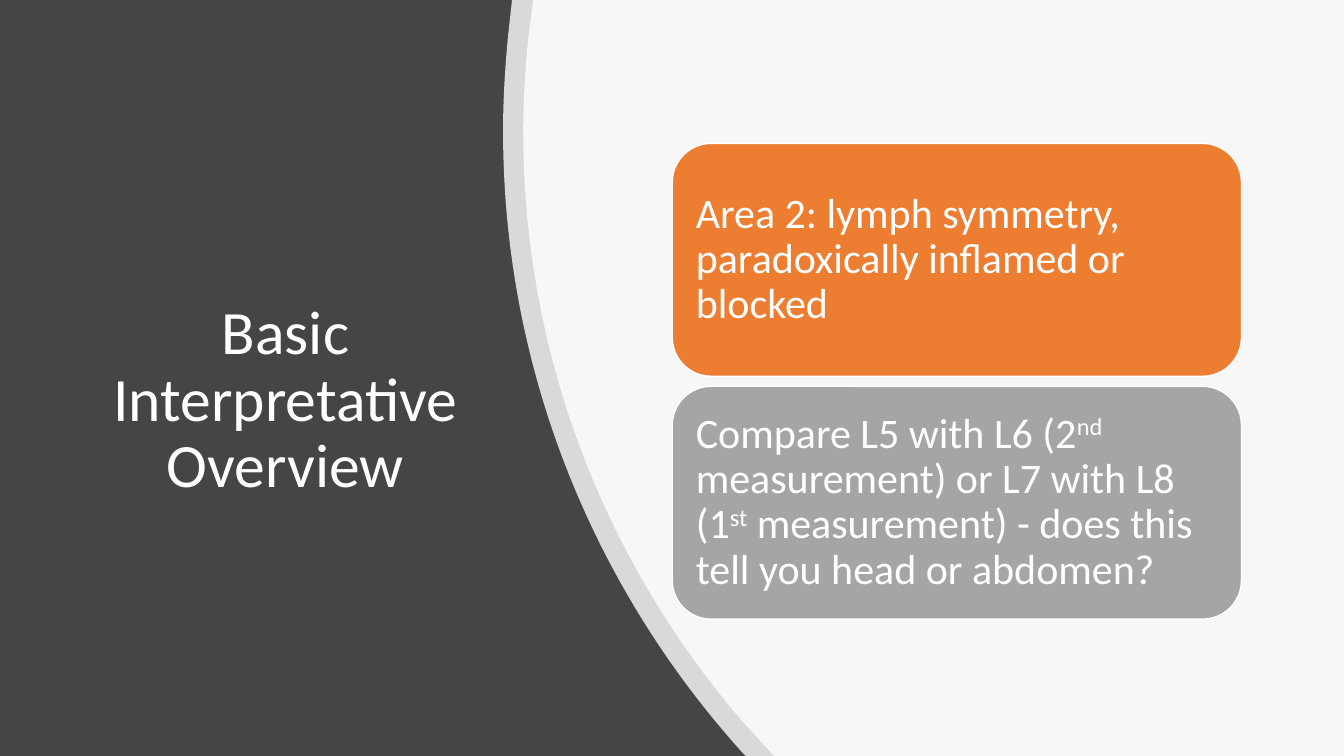
"""Build the Basic Interpretative Overview slide: a curved title panel and two cards."""
import lxml.etree
import pptx
import pptx.dml.color
import pptx.enum.shapes
import pptx.enum.text
import pptx.oxml.ns
import pptx.util

THEME = {
    "font": "Calibri",
    "panel": "454545",
    "white": "FFFFFF",
    "cards": ("ED7D31", "A5A5A5"),
    "title_size": 44,
    "card_size": 30,
    "veil_alpha": 80,
    "superscript": 30,
}

deck = pptx.Presentation()
deck.slide_width = pptx.util.Inches(13.33)
deck.slide_height = pptx.util.Inches(7.5)
slide = deck.slides.add_slide(deck.slide_layouts.get_by_name("Title Only"))
rgb = pptx.dml.color.RGBColor.from_string
qn = pptx.oxml.ns.qn


def at(across, down):
    """Turn percentages of the slide's width and height into lengths."""
    return round(deck.slide_width * across / 100), round(deck.slide_height * down / 100)


def write(frame, pieces, size, align, inset):
    """Fill a text frame with one paragraph; every second piece is superscript."""
    frame.word_wrap = True
    frame.auto_size = pptx.enum.text.MSO_AUTO_SIZE.NONE
    frame.vertical_anchor = pptx.enum.text.MSO_ANCHOR.MIDDLE
    frame.margin_left = frame.margin_right = pptx.util.Inches(inset)
    frame.margin_top = frame.margin_bottom = pptx.util.Inches(inset)
    paragraph = frame.paragraphs[0]
    paragraph.alignment = align
    paragraph.line_spacing = 0.9
    for index, piece in enumerate(pieces):
        run = paragraph.add_run()
        run.text = piece
        run.font.name = THEME["font"]
        run.font.size = pptx.util.Pt(size)
        run.font.color.rgb = rgb(THEME["white"])
        if index % 2:
            run.font._element.set("baseline", str(THEME["superscript"] * 1000))


slide.background.fill.solid()
slide.background.fill.fore_color.rgb = rgb(THEME["panel"])

heading = slide.shapes.title
heading.left, heading.top = at(6.56, 20.4)
heading.width, heading.height = at(29.38, 65.33)
write(heading.text_frame, ["Basic Interpretative Overview"], size=THEME["title_size"],
      align=pptx.enum.text.PP_ALIGN.CENTER, inset=0.1)

veil_edges = [
    (38.1, 55.5, [(55.2, 99.47), (44.18, 77.73), (37.43, 48.93), (37.43, 17.33),
                  (37.43, 13.07), (37.58, 8.93), (37.8, 4.8)]),
    (39.68, 57.6, [(55.2, 95.33), (45.08, 74.4), (38.93, 47.2), (38.93, 17.33),
                   (38.93, 13.2), (39.08, 9.2), (39.3, 5.07)]),
]
for top_edge, bottom_edge, knots in veil_edges:
    corners = [(100, 0), (100, 100), (bottom_edge, 100), *knots[::3]]
    builder = slide.shapes.build_freeform(*at(top_edge, 0))
    builder.add_line_segments([at(*corner) for corner in corners], close=True)
    veil = builder.convert_to_shape()
    veil.shadow.inherit = False
    veil.line.fill.background()
    veil.fill.solid()
    veil.fill.fore_color.rgb = rgb(THEME["white"])
    properties = veil._element.spPr
    tint = properties.find(".//" + qn("a:srgbClr"))
    lxml.etree.SubElement(tint, qn("a:alpha"), val=str(THEME["veil_alpha"] * 1000))
    straights = properties.findall(".//" + qn("a:lnTo"))
    bends = [segment for segment in straights if segment.getnext().tag != qn("a:close")][-1:]
    bends.append(bends[0].getnext())
    for straight, controls in zip(bends, (knots[1:3], knots[4:6])):
        bend = straight.makeelement(qn("a:cubicBezTo"))
        for control in controls:
            x, y = at(*control)
            lxml.etree.SubElement(bend, qn("a:pt"), x=str(x - veil.left), y=str(y - veil.top))
        bend.append(straight[0])
        straight.getparent().replace(straight, bend)

card_texts = [
    ["Area 2: lymph symmetry, paradoxically inflamed or blocked"],
    ["Compare L5 with L6 (2", "nd", " measurement) or L7 with L8 (1", "st",
     " measurement) - does this tell you head or abdomen?"],
]
card_left, card_top, card_pitch = 50.02, 18.97, 32.13
card_width, card_height = 42.35, 30.8
pad_across, pad_down = 0.85, 1.5
cards = slide.shapes.add_group_shape()
for row, (pieces, color) in enumerate(zip(card_texts, THEME["cards"])):
    top = card_top + row * card_pitch
    card = cards.shapes.add_shape(
        pptx.enum.shapes.MSO_SHAPE.ROUNDED_RECTANGLE,
        *at(card_left, top), *at(card_width, card_height))
    card.shadow.inherit = False
    card.fill.solid()
    card.fill.fore_color.rgb = rgb(color)
    card.line.color.rgb = rgb(THEME["white"])
    card.line.width = pptx.util.Pt(1)
    wording = cards.shapes.add_textbox(
        *at(card_left + pad_across, top + pad_down),
        *at(card_width - 2 * pad_across, card_height - 2 * pad_down))
    write(wording.text_frame, pieces, size=THEME["card_size"],
          align=pptx.enum.text.PP_ALIGN.LEFT, inset=0.12)

deck.save("out.pptx")
